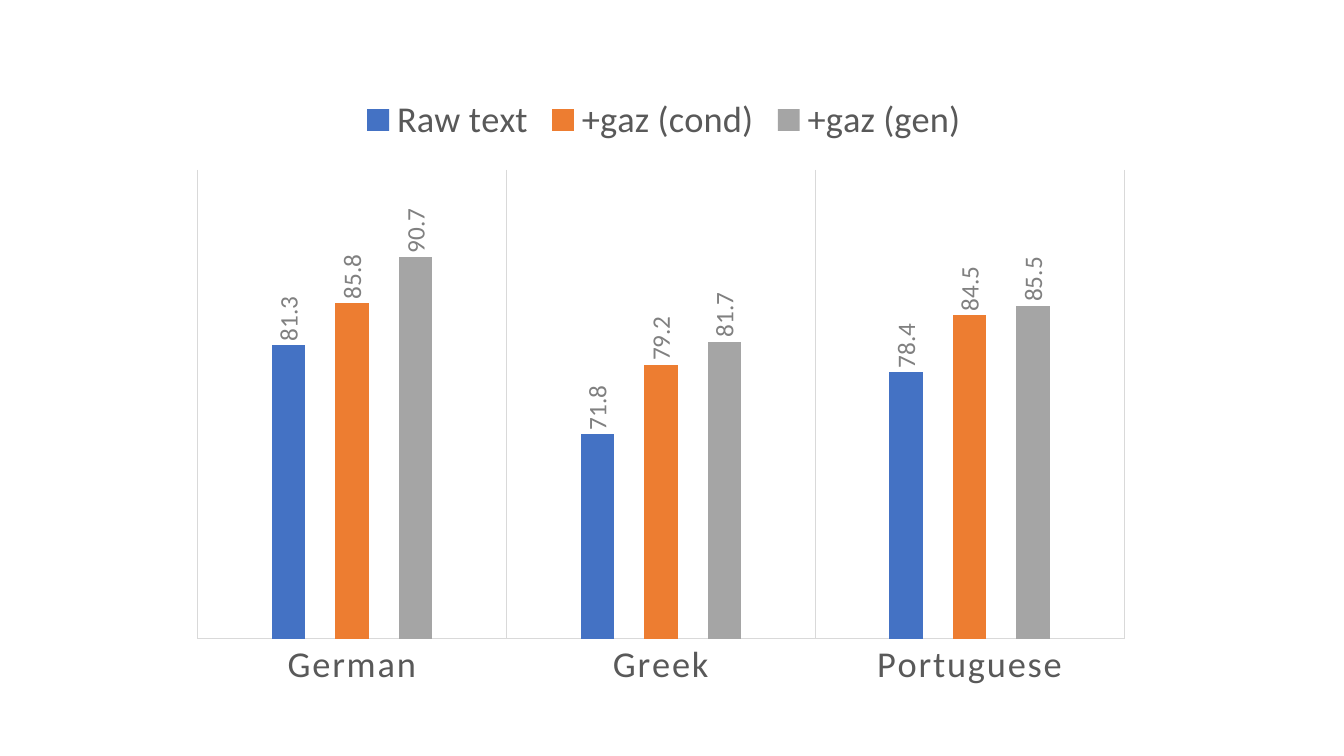
from lxml import etree
from pptx import Presentation
from pptx.chart.data import CategoryChartData
from pptx.dml.color import RGBColor
from pptx.enum.chart import XL_CHART_TYPE, XL_LABEL_POSITION, XL_LEGEND_POSITION, XL_TICK_MARK
from pptx.oxml.ns import qn
from pptx.util import Cm, Pt

CLUSTERED = XL_CHART_TYPE.COLUMN_CLUSTERED
OUTSIDE_END = XL_LABEL_POSITION.OUTSIDE_END
LEGEND_TOP = XL_LEGEND_POSITION.TOP
NO_TICK = XL_TICK_MARK.NONE

BLANK_LAYOUT = 6
FONT = "Calibri"
TEXT_COLOR = "595959"
LABEL_COLOR = "808080"
LINE_COLOR = "D9D9D9"
LANGUAGES = ["German", "Greek", "Portuguese"]
SCORES = [
    ("Raw text", (81.3, 71.8, 78.4), "4472C4"),
    ("+gaz (cond)", (85.8, 79.2, 84.5), "ED7D31"),
    ("+gaz (gen)", (90.7, 81.7, 85.5), "A5A5A5"),
]
PLOT_AREA = {"x": 0.056, "y": 0.137, "w": 0.882, "h": 0.742}


def color(hex_string):
    return RGBColor.from_string(hex_string)


def style_font(font, size, hex_string):
    font.name = FONT
    font.size = Pt(size)
    font.bold = False
    font.color.rgb = color(hex_string)


def style_line(line):
    line.color.rgb = color(LINE_COLOR)
    line.width = Pt(0.75)


def place_plot_area(chart):
    plot_area = chart.element.find(".//" + qn("c:plotArea"))
    for layout in plot_area.findall(qn("c:layout")):
        plot_area.remove(layout)
    layout = etree.Element(qn("c:layout"))
    manual = etree.SubElement(layout, qn("c:manualLayout"))
    settings = {"layoutTarget": "inner", "xMode": "edge", "yMode": "edge", **PLOT_AREA}
    for name, value in settings.items():
        etree.SubElement(manual, qn("c:" + name)).set("val", str(value))
    plot_area.insert(0, layout)


def style_axes(chart):
    category_axis = chart.category_axis
    category_axis.major_tick_mark = NO_TICK
    category_axis.minor_tick_mark = NO_TICK
    category_axis.has_major_gridlines = True
    style_line(category_axis.major_gridlines.format.line)
    style_line(category_axis.format.line)
    style_font(category_axis.tick_labels.font, 26, TEXT_COLOR)
    for properties in chart.element.iterfind(f".//{qn('c:catAx')}//{qn('a:defRPr')}"):
        properties.set("spc", "120")

    value_axis = chart.value_axis
    value_axis.minimum_scale = 50
    value_axis.maximum_scale = 100
    value_axis.has_major_gridlines = False
    value_axis.visible = False


def style_series(chart):
    plot = chart.plots[0]
    plot.gap_width = 444
    plot.overlap = -90
    plot.vary_by_categories = False
    for series, (_, _, fill_color) in zip(plot.series, SCORES):
        series.format.fill.solid()
        series.format.fill.fore_color.rgb = color(fill_color)
        labels = series.data_labels
        labels.show_value = True
        labels.position = OUTSIDE_END
        style_font(labels.font, 18, LABEL_COLOR)
    for body in chart.element.iterfind(f".//{qn('c:dLbls')}//{qn('a:bodyPr')}"):
        body.set("rot", "-5400000")
        body.set("vert", "horz")


def add_score_chart(slide):
    chart_data = CategoryChartData(number_format="0.0")
    chart_data.categories = LANGUAGES
    for name, values, _ in SCORES:
        chart_data.add_series(name, values)
    chart = slide.shapes.add_chart(
        CLUSTERED, Cm(3.5), Cm(2.1), Cm(26.47), Cm(15.93), chart_data
    ).chart
    style_font(chart.font, 10, "000000")
    chart.has_title = False
    chart.has_legend = True
    chart.legend.position = LEGEND_TOP
    chart.legend.include_in_layout = False
    style_font(chart.legend.font, 26, TEXT_COLOR)
    place_plot_area(chart)
    style_axes(chart)
    style_series(chart)


def main():
    presentation = Presentation()
    presentation.slide_width = Cm(33.87)
    presentation.slide_height = Cm(19.05)
    slide = presentation.slides.add_slide(presentation.slide_layouts[BLANK_LAYOUT])
    add_score_chart(slide)
    presentation.save("out.pptx")


if __name__ == "__main__":
    main()
